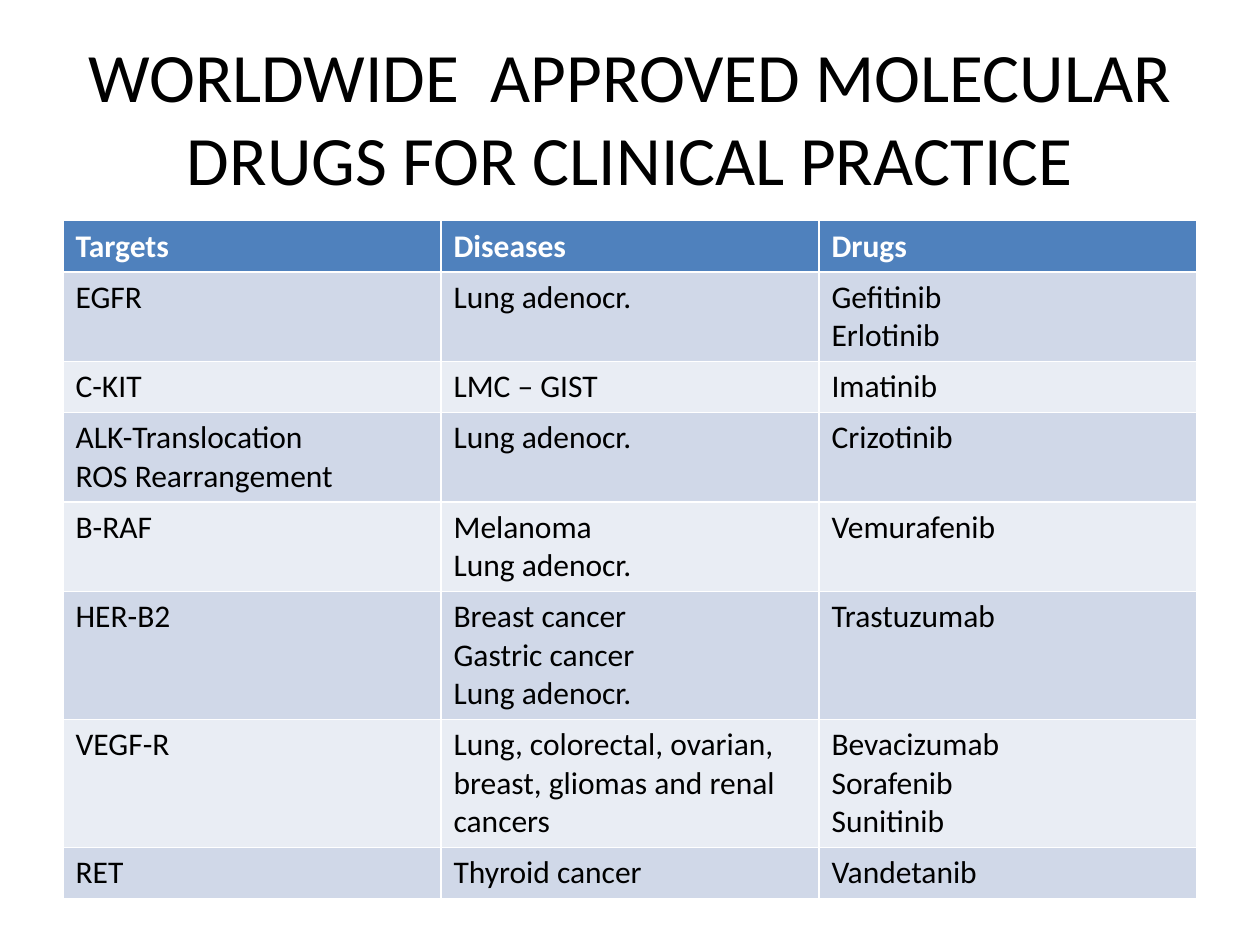
from pptx import Presentation
from pptx import util as u
from pptx.dml.color import RGBColor
from pptx.enum import text

FONT = "Calibri"
COLORS = {
    "header": "4F81BD",
    "odd_row": "D0D8E8",
    "even_row": "E9EDF4",
    "header_text": "FFFFFF",
    "text": "000000",
}
TITLE = "WORLDWIDE  APPROVED MOLECULAR DRUGS FOR CLINICAL PRACTICE"
ROWS = [
    ("Targets", "Diseases", "Drugs"),
    ("EGFR", "Lung adenocr.", "Gefitinib\nErlotinib"),
    ("C-KIT", "LMC – GIST", "Imatinib"),
    ("ALK-Translocation\nROS Rearrangement", "Lung adenocr.", "Crizotinib"),
    ("B-RAF", "Melanoma\nLung adenocr.", "Vemurafenib"),
    ("HER-B2", "Breast cancer\nGastric cancer\nLung adenocr.", "Trastuzumab"),
    (
        "VEGF-R",
        "Lung, colorectal, ovarian, breast, gliomas and renal cancers",
        "Bevacizumab\nSorafenib\nSunitinib",
    ),
    ("RET", "Thyroid cancer", "Vandetanib"),
]
LEFT, WIDTH = u.Cm(1.27), u.Cm(22.86)
ROW_HEIGHT = u.Cm(1.03)


def color(name):
    return RGBColor.from_string(COLORS[name])


def format_paragraphs(frame, size, color_name, bold=False):
    for paragraph in frame.paragraphs:
        font = paragraph.font
        font.name = FONT
        font.size = u.Pt(size)
        font.bold = bold
        font.color.rgb = color(color_name)


def set_title(slide):
    title = slide.shapes.title
    title.left, title.top = LEFT, u.Cm(0.76)
    title.width, title.height = WIDTH, u.Cm(3.18)
    frame = title.text_frame
    frame.text = TITLE
    frame.word_wrap = True
    frame.auto_size = text.MSO_AUTO_SIZE.NONE
    frame.vertical_anchor = text.MSO_ANCHOR.MIDDLE
    frame.paragraphs[0].alignment = text.PP_ALIGN.CENTER
    format_paragraphs(frame, 39.6, "text")


def fill_cell(cell, content, fill_name, is_header):
    cell.text = content
    cell.fill.solid()
    cell.fill.fore_color.rgb = color(fill_name)
    text_color = "header_text" if is_header else "text"
    format_paragraphs(cell.text_frame, 18, text_color, is_header)


def add_drug_table(slide):
    table = slide.shapes.add_table(
        len(ROWS), len(ROWS[0]), LEFT, u.Cm(4.45), WIDTH, ROW_HEIGHT * len(ROWS)
    ).table
    for row_index, contents in enumerate(ROWS):
        is_header = row_index == 0
        band = "odd_row" if row_index % 2 else "even_row"
        fill_name = "header" if is_header else band
        for column_index, content in enumerate(contents):
            cell = table.cell(row_index, column_index)
            fill_cell(cell, content, fill_name, is_header)


def main():
    presentation = Presentation()
    presentation.slide_width = u.Cm(25.4)
    presentation.slide_height = u.Cm(19.05)
    slide = presentation.slides.add_slide(presentation.slide_layouts[5])
    set_title(slide)
    add_drug_table(slide)
    presentation.save("out.pptx")


if __name__ == "__main__":
    main()
